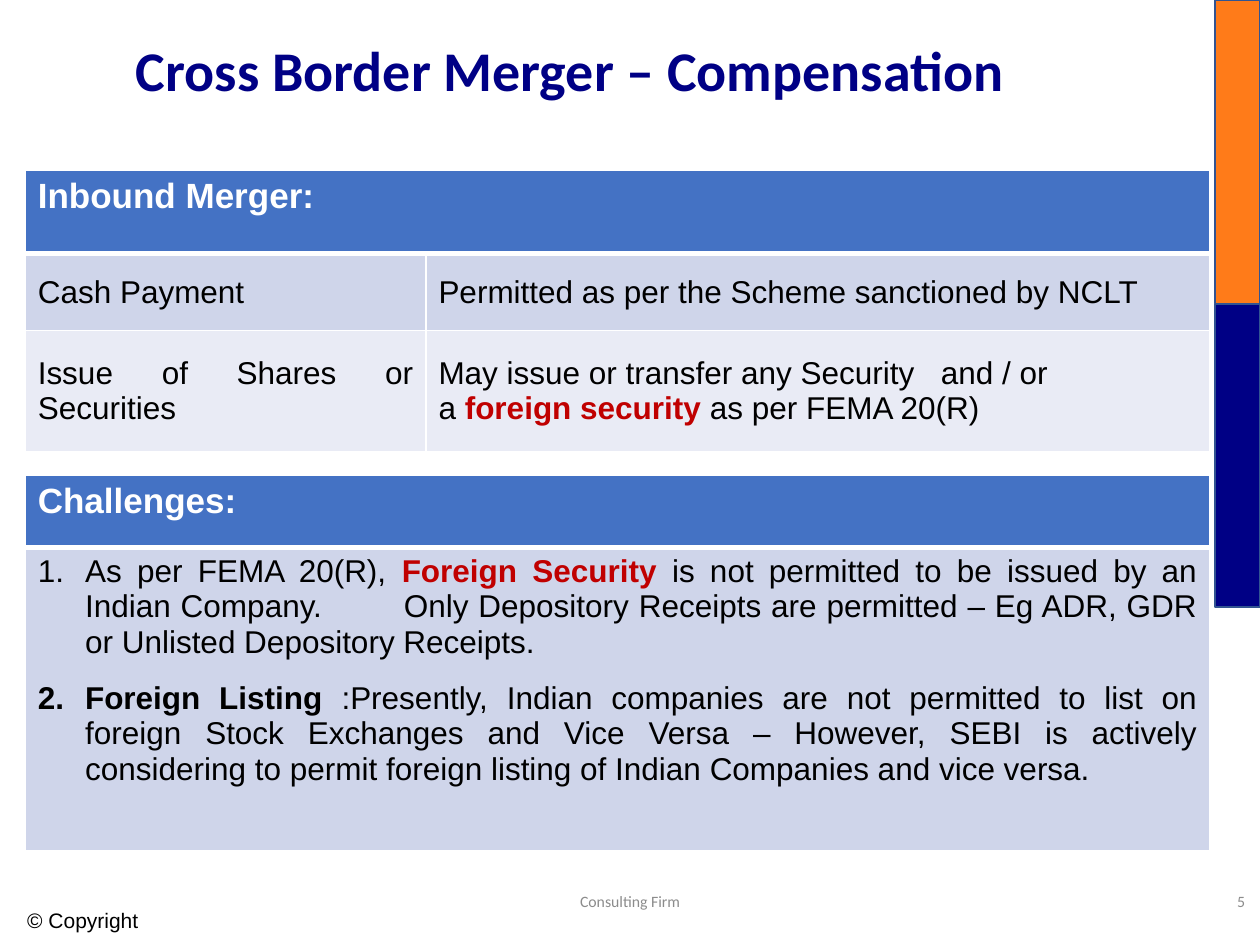
from lxml.etree import SubElement as Sub
from pptx import Presentation
from pptx.dml.color import RGBColor as RGB
from pptx.enum.shapes import MSO_SHAPE as SHAPE
from pptx.enum.text import MSO_ANCHOR as ANCHOR, PP_ALIGN as ALIGN
from pptx.oxml import parse_xml
from pptx.oxml.ns import nsdecls, qn
from pptx.util import Pt

COLORS = {
    "navy": "000085", "orange": "FF7B19", "outline": "325491",
    "header": "4472C4", "band_dark": "CFD5EA", "band_light": "E9EBF5",
    "white": "FFFFFF", "black": "000000", "red": "C00000", "gray": "8C8C8C",
}


def color(name):
    return RGB.from_string(COLORS[name])


def style(r, size, name="black", bold=False, font="Arial"):
    r.font.size, r.font.bold, r.font.name = Pt(size), bold, font
    r.font.color.rgb = color(name)


def add_label(s, box, text, size, name, font="Calibri", bold=False, align=ALIGN.LEFT):
    tf = s.shapes.add_textbox(*map(Pt, box)).text_frame
    tf.word_wrap = True
    tf.vertical_anchor = ANCHOR.MIDDLE
    tf.text = text
    p = tf.paragraphs[0]
    p.alignment = align
    style(p.runs[0], size, name, bold, font)
    return p


def add_side_bar(s, left, top, width, height):
    names = ("orange", "navy")
    part = height / len(names)
    for i, name in enumerate(names):
        sp = s.shapes.add_shape(SHAPE.RECTANGLE, Pt(left), Pt(top + i * part), Pt(width), Pt(part))
        sp.shadow.inherit = False
        sp.fill.solid()
        sp.fill.fore_color.rgb = color(name)
        sp.line.color.rgb = color("outline")
        sp.line.width = Pt(1)


def style_cell(cell, fill, bottom=1):
    cell.fill.solid()
    cell.fill.fore_color.rgb = color(fill)
    widths = {"lnL": 1, "lnR": 1, "lnT": 1, "lnB": bottom}
    for i, (tag, width) in enumerate(widths.items()):
        cell._tc.get_or_add_tcPr().insert(i, parse_xml(
            f'<a:{tag} {nsdecls("a")} w="{Pt(width)}"><a:solidFill>'
            f'<a:srgbClr val="{COLORS["white"]}"/></a:solidFill></a:{tag}>'))


def add_grid(s, left, top, cols, rows):
    box = map(Pt, (left, top, sum(cols), sum(rows)))
    table = s.shapes.add_table(len(rows), len(cols), *box).table
    for col, width in zip(table.columns, cols):
        col.width = Pt(width)
    for row, height in zip(table.rows, rows):
        row.height = Pt(height)
    return table


def fill_header(table, text):
    for cell in table.rows[0].cells:
        style_cell(cell, "header", 3)
    cell = table.cell(0, 0)
    cell.text = text
    style(cell.text_frame.paragraphs[0].runs[0], 20, "white", True)


def fill_body(cell, paragraphs, tab=None, numbered=False):
    tf = cell.text_frame
    for i, parts in enumerate(paragraphs):
        p = tf.add_paragraph() if i else tf.paragraphs[0]
        p.alignment = ALIGN.JUSTIFY
        pPr = p._p.get_or_add_pPr()
        if numbered:
            pPr.set("marL", str(Pt(27)))
            pPr.set("indent", str(Pt(-27)))
            Sub(pPr, qn("a:buFont"), typeface="+mj-lt")
            Sub(pPr, qn("a:buAutoNum"), type="arabicPeriod")
            p.space_after = Pt(6)
            if i:
                p.space_before = Pt(6)
        if tab and i == 0:
            Sub(Sub(pPr, qn("a:tabLst")), qn("a:tab"), pos=str(Pt(tab)), algn="l")
        for text, name, bold in parts:
            r = p.add_run()
            r.text = text
            style(r, 18, name, bold)


def add_inbound_table(s, left, top, width):
    first = 229
    table = add_grid(s, left, top, (first, width - first), (47.5, 44, 69))
    table.cell(0, 0).merge(table.cell(0, 1))
    fill_header(table, "Inbound Merger:")
    body = [
        ("band_dark", [
            [[("Cash Payment", "black", False)]],
            [[("Permitted as per the Scheme sanctioned by NCLT", "black", False)]],
        ]),
        ("band_light", [
            [[("Issue of Shares or Securities", "black", False)]],
            [[("May issue or transfer any Security\tand / or", "black", False)],
             [("a ", "black", False), ("foreign security ", "red", True),
              ("as per FEMA 20(R)", "black", False)]],
        ]),
    ]
    for row, (fill, cells) in enumerate(body, 1):
        for col, paragraphs in enumerate(cells):
            cell = table.cell(row, col)
            style_cell(cell, fill)
            cell.vertical_anchor = ANCHOR.MIDDLE
            fill_body(cell, paragraphs, tab=287 if row == 2 and col == 1 else None)


def add_challenges_table(s, left, top, width):
    table = add_grid(s, left, top, (width,), (41.5, 173))
    fill_header(table, "Challenges:")
    cell = table.cell(1, 0)
    style_cell(cell, "band_dark")
    fill_body(cell, [
        [("As per FEMA 20(R), ", "black", False), ("Foreign Security", "red", True),
         (" is not permitted to be issued by an Indian Company.\tOnly Depository Receipts "
          "are permitted – Eg ADR, GDR or Unlisted Depository Receipts.", "black", False)],
        [("Foreign Listing ", "black", True),
         (":Presently, Indian companies are not permitted to list on foreign Stock Exchanges "
          "and Vice Versa – However, SEBI is actively considering to permit foreign listing "
          "of Indian Companies and vice versa.", "black", False)],
    ], tab=208.5, numbered=True)


def add_footer(s, left, top, width, height):
    add_label(s, (left + width - 162, top, 162, height), "5", 9, "gray", align=ALIGN.RIGHT)
    add_label(s, (left + 230, top, 243, height), "Consulting Firm", 9, "gray", align=ALIGN.CENTER)
    add_label(s, (left, top + 11, 119, height), "© Copyright", 12, "black", "Arial")


def main():
    prs = Presentation()
    prs.slide_width, prs.slide_height = Pt(720), Pt(540)
    s = prs.slides.add_slide(prs.slide_layouts[6])
    add_side_bar(s, 694.5, 0, 25.5, 347)
    title = add_label(s, (70.5, 1.5, 620.5, 81), "Cross Border Merger – Compensation",
                      32, "navy", bold=True)
    title.line_spacing = 0.9
    add_inbound_table(s, 14.4, 97.5, 677)
    add_challenges_table(s, 14.4, 271.5, 677)
    add_footer(s, 8.5, 500.5, 710, 28.5)
    prs.save("out.pptx")


if __name__ == "__main__":
    main()
